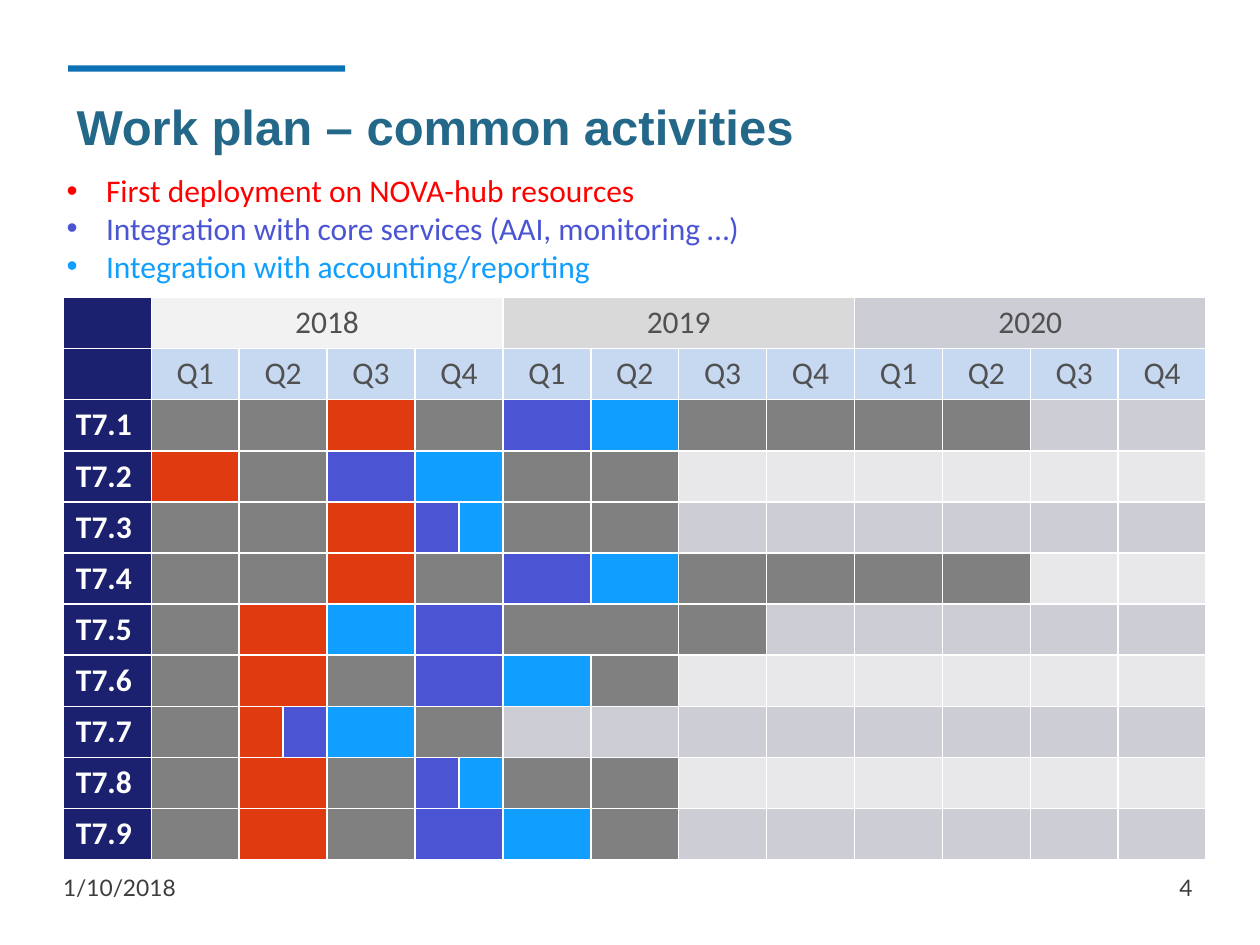
"""Build the work plan slide: three legend bullets above a quarterly schedule of tasks."""
from dataclasses import dataclass

import lxml.etree
import pptx
import pptx.dml.color
import pptx.enum.shapes
import pptx.enum.text
import pptx.oxml.ns
import pptx.util

Pt = pptx.util.Pt
RGB = pptx.dml.color.RGBColor
Align = pptx.enum.text.PP_ALIGN
qn = pptx.oxml.ns.qn

WHITE = RGB(0xFF, 0xFF, 0xFF)
ACCENT = RGB(0x0E, 0x71, 0xB4)
TITLE = RGB(0x24, 0x68, 0x89)
FOOTER = RGB(0x3D, 0x3D, 0x3D)
HEADING = RGB(0x51, 0x51, 0x51)
NAVY = RGB(0x1B, 0x21, 0x6E)
QUARTER = RGB(0xC6, 0xD9, 0xF1)
LEGEND_RED = RGB(0xFF, 0x00, 0x00)
DEPLOYMENT = RGB(0xDF, 0x3A, 0x10)
INTEGRATION = RGB(0x4B, 0x55, 0xD3)
ACCOUNTING = RGB(0x10, 0x9E, 0xFF)
BUSY = RGB(0x80, 0x80, 0x80)
IDLE_DARK = RGB(0xCD, 0xCD, 0xD5)
IDLE_LIGHT = RGB(0xE8, 0xE8, 0xEB)

PHASES = {"D": DEPLOYMENT, "I": INTEGRATION, "A": ACCOUNTING, "B": BUSY,
          "<": BUSY, ">": BUSY}
SIDES = {"<": "LTB", ">": "RTB"}
QUARTER_SPANS = [1, 2, 1, 2] + [1] * 8
QUARTER_STARTS = [1 + sum(QUARTER_SPANS[:i]) for i in range(12)]
QUARTER_WIDTH = 50.23
ROW_HEIGHT = 29.2


@dataclass
class Year:
    label: str
    color: RGB


@dataclass
class Task:
    label: str
    phases: str


@dataclass
class Bullet:
    text: str
    color: RGB


YEARS = [
    Year("2018", RGB(0xF2, 0xF2, 0xF2)),
    Year("2019", RGB(0xD9, 0xD9, 0xD9)),
    Year("2020", IDLE_DARK),
]
TASKS = [
    Task("T7.1", "B B D B I A B B B B"),
    Task("T7.2", "D B I A B B"),
    Task("T7.3", "B B D IA B B"),
    Task("T7.4", "B B D B I A B B B B"),
    Task("T7.5", "B D A I < > B"),
    Task("T7.6", "B D B I A B"),
    Task("T7.7", "B DI A B"),
    Task("T7.8", "B D B IA B B"),
    Task("T7.9", "B D B I A B"),
]
BULLETS = [
    Bullet("First deployment on NOVA-hub resources", LEGEND_RED),
    Bullet("Integration with core services (AAI, monitoring …)", INTEGRATION),
    Bullet("Integration with accounting/reporting", ACCOUNTING),
]


def write(paragraph, text: str, *, color: RGB, size: float = 18, font: str = "Calibri",
          bold: bool = False, align=Align.LEFT) -> None:
    """Add one formatted run to a paragraph."""
    paragraph.alignment = align
    run = paragraph.add_run()
    run.text = text
    run.font.size = Pt(size)
    run.font.name = font
    run.font.bold = bold
    run.font.color.rgb = color


def add_frame(slide, left: float, top: float, width: float, height: float):
    """Add a wrapping text box and return its text frame."""
    frame = slide.shapes.add_textbox(Pt(left), Pt(top), Pt(width), Pt(height)).text_frame
    frame.word_wrap = True
    return frame


def add_bullet(paragraph, bullet: Bullet) -> None:
    """Write one legend line with a hanging bullet."""
    write(paragraph, bullet.text, color=bullet.color)
    properties = paragraph._p.get_or_add_pPr()
    properties.set("marL", str(Pt(22.5)))
    properties.set("indent", str(-Pt(22.5)))
    lxml.etree.SubElement(properties, qn("a:buFont"), typeface="Arial")
    lxml.etree.SubElement(properties, qn("a:buChar"), char="•")


def paint(cell, color: RGB, sides: str = "LRTB") -> None:
    """Fill a cell and draw white borders on the given sides."""
    properties = cell._tc.get_or_add_tcPr()
    for side in "LRTB":
        visible = side in sides
        line = lxml.etree.SubElement(properties, qn(f"a:ln{side}"), w=str(Pt(1 if visible else 0)))
        fill = lxml.etree.SubElement(line, qn("a:solidFill" if visible else "a:noFill"))
        if visible:
            lxml.etree.SubElement(fill, qn("a:srgbClr"), val=str(WHITE))
    cell.fill.solid()
    cell.fill.fore_color.rgb = color


def paint_span(table, row: int, start: int, span: int, color: RGB, sides: str = "LRTB"):
    """Paint a run of columns as one cell and return that cell."""
    for column in range(start, start + span):
        paint(table.cell(row, column), color, sides)
    first = table.cell(row, start)
    if span > 1:
        first.merge(table.cell(row, start + span - 1))
    return first


def add_task(table, row: int, task: Task) -> None:
    """Write a task label and paint its quarters, idle ones after the last phase."""
    label = paint_span(table, row, 0, 1, NAVY)
    write(label.text_frame.paragraphs[0], task.label, color=WHITE, bold=True)
    idle = IDLE_LIGHT if row % 2 else IDLE_DARK
    phases = task.phases.split()
    phases += ["."] * (len(QUARTER_SPANS) - len(phases))
    for start, span, codes in zip(QUARTER_STARTS, QUARTER_SPANS, phases):
        part = span // len(codes)
        for i, code in enumerate(codes):
            paint_span(table, row, start + i * part, part,
                       PHASES.get(code, idle), SIDES.get(code, "LRTB"))


def add_schedule(slide) -> None:
    """Add the schedule table with year, quarter and task rows."""
    rows = len(TASKS) + 2
    columns = 1 + sum(QUARTER_SPANS)
    table = slide.shapes.add_table(rows, columns, Pt(36.2), Pt(170), Pt(QUARTER_WIDTH * 13),
                                   Pt(ROW_HEIGHT * rows)).table
    table.first_row = False
    table.horz_banding = False
    for row in table.rows:
        row.height = Pt(ROW_HEIGHT)
    table.columns[0].width = Pt(QUARTER_WIDTH)
    for start, span in zip(QUARTER_STARTS, QUARTER_SPANS):
        for column in range(start, start + span):
            table.columns[column].width = Pt(QUARTER_WIDTH / span)

    for row in range(2):
        paint_span(table, row, 0, 1, NAVY)
    for i, year in enumerate(YEARS):
        quarters = slice(4 * i, 4 * i + 4)
        heading = paint_span(table, 0, QUARTER_STARTS[4 * i], sum(QUARTER_SPANS[quarters]),
                             year.color)
        write(heading.text_frame.paragraphs[0], year.label, color=HEADING, align=Align.CENTER)
    for i, (start, span) in enumerate(zip(QUARTER_STARTS, QUARTER_SPANS)):
        heading = paint_span(table, 1, start, span, QUARTER)
        write(heading.text_frame.paragraphs[0], f"Q{i % 4 + 1}", color=HEADING,
              align=Align.CENTER)
    for row, task in enumerate(TASKS, start=2):
        add_task(table, row, task)


def main() -> None:
    """Build and save the slide."""
    deck = pptx.Presentation()
    deck.slide_width, deck.slide_height = Pt(720), Pt(540)
    slide = deck.slides.add_slide(deck.slide_layouts[6])

    accent = slide.shapes.add_shape(pptx.enum.shapes.MSO_SHAPE.RECTANGLE,
                                    Pt(38.9), Pt(37.4), Pt(158.4), Pt(3.6))
    accent.shadow.inherit = False
    accent.fill.solid()
    accent.fill.fore_color.rgb = ACCENT
    accent.line.fill.background()

    date = add_frame(slide, 36, 496, 168, 29)
    date.margin_left = 0
    write(date.paragraphs[0], "1/10/2018", color=FOOTER, size=13, font="Lato")
    number = add_frame(slide, 520.5, 496, 168, 29)
    write(number.paragraphs[0], "4", color=FOOTER, size=13, font="Lato", align=Align.RIGHT)
    title = add_frame(slide, 36.7, 49, 652.3, 45.4)
    title.vertical_anchor = pptx.enum.text.MSO_ANCHOR.MIDDLE
    write(title.paragraphs[0], "Work plan – common activities", color=TITLE, size=28,
          font="Arial", bold=True)

    add_schedule(slide)
    legend = add_frame(slide, 31, 94.3, 402.5, 72.7)
    for i, bullet in enumerate(BULLETS):
        add_bullet(legend.add_paragraph() if i else legend.paragraphs[0], bullet)
    deck.save("out.pptx")


if __name__ == "__main__":
    main()
